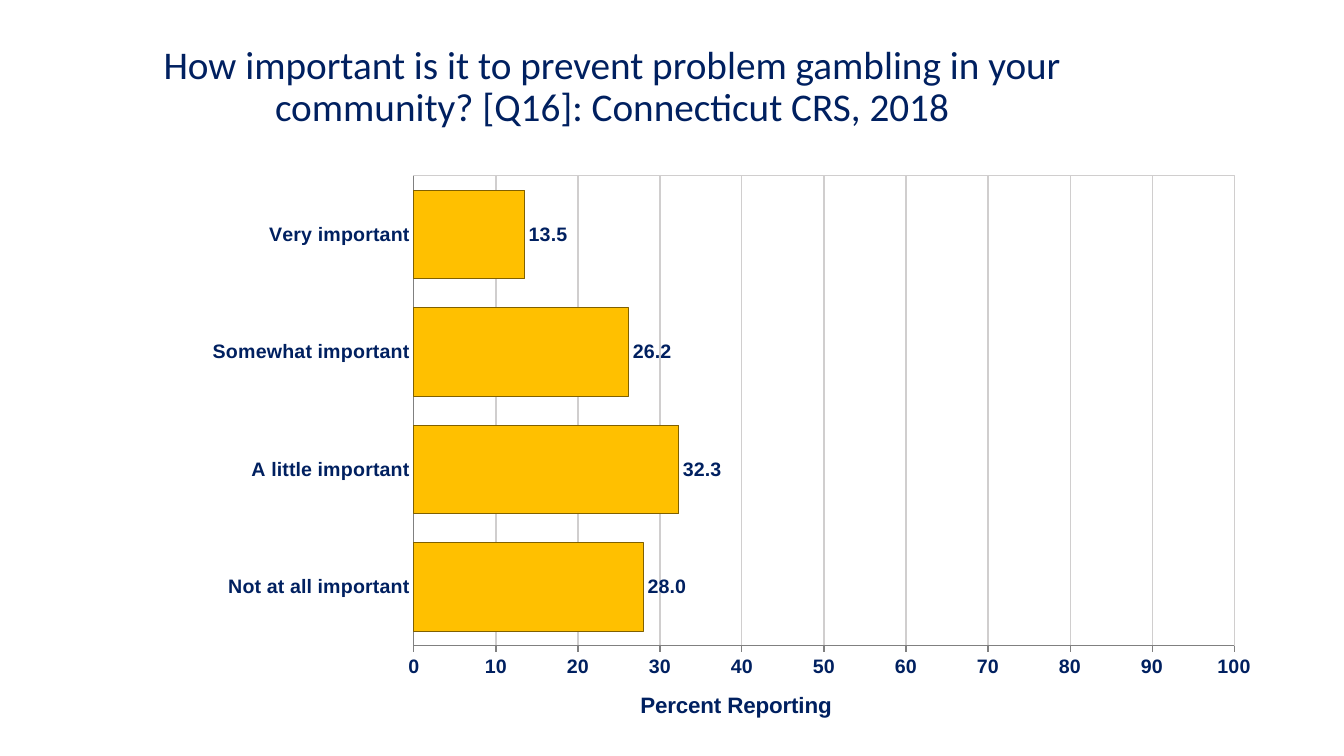
from lxml import etree
from pptx import Presentation
from pptx.chart.data import CategoryChartData
from pptx.dml.color import RGBColor
from pptx.enum.chart import XL_CHART_TYPE, XL_LABEL_POSITION, XL_TICK_MARK
from pptx.enum.text import MSO_ANCHOR, PP_ALIGN
from pptx.oxml import parse_xml
from pptx.oxml.ns import nsdecls, qn
from pptx.util import Inches, Pt

BAR_CLUSTERED = XL_CHART_TYPE.BAR_CLUSTERED
OUTSIDE_END = XL_LABEL_POSITION.OUTSIDE_END
TICK_NONE, TICK_OUT = XL_TICK_MARK.NONE, XL_TICK_MARK.OUTSIDE
TOP, CENTER = MSO_ANCHOR.TOP, PP_ALIGN.CENTER

NAVY = RGBColor(0x00, 0x20, 0x60)
GOLD = RGBColor(0xFF, 0xC0, 0x00)
DARK_GOLD = RGBColor(0x80, 0x60, 0x00)
GRID_GREY = RGBColor(0xD0, 0xCE, 0xCE)
AXIS_GREY = RGBColor(0x80, 0x80, 0x80)


def style_font(font, size, name="Arial", bold=True):
    font.size, font.name, font.bold = Pt(size), name, bold
    font.color.rgb = NAVY


def set_layout(parent, index, target=None, **shares):
    """Place a chart part by shares of the chart's size."""
    for old in parent.findall(qn("c:layout")):
        parent.remove(old)
    layout = parse_xml(f"<c:layout {nsdecls('c')}><c:manualLayout/></c:layout>")
    settings = {"layoutTarget": target} if target else {}
    settings.update(xMode="edge", yMode="edge", **shares)
    for tag, value in settings.items():
        etree.SubElement(layout[0], qn(f"c:{tag}")).set("val", str(value))
    parent.insert(index, layout)


prs = Presentation()
prs.slide_width, prs.slide_height = Inches(13.33), Inches(7.5)
slide = prs.slides.add_slide(prs.slide_layouts[6])

# Question
question = slide.shapes.add_textbox(Inches(0.92), Inches(0.4), Inches(10.3), Inches(1.45))
question.text_frame.word_wrap = True
question.text_frame.vertical_anchor = TOP
paragraph = question.text_frame.paragraphs[0]
paragraph.alignment, paragraph.line_spacing = CENTER, 0.9
run = paragraph.add_run()
run.text = ("How important is it to prevent problem gambling in your "
            "community? [Q16]: Connecticut CRS, 2018")
style_font(run.font, 28, "Calibri", False)

# Answers, from the bottom bar up
answers = CategoryChartData(number_format="0.0")
answers.categories = ["Not at all important", "A little important",
                      "Somewhat important", "Very important"]
answers.add_series("Series 1", (28.0, 32.3, 26.2, 13.5))
chart = slide.shapes.add_chart(BAR_CLUSTERED, Inches(0.59), Inches(1.24),
                               Inches(12.25), Inches(5.95), answers).chart
chart.has_legend = chart.has_title = False
chart.font.size, chart.font.name = Pt(18), "Calibri"

# Bars and their values
bars = chart.plots[0]
bars.vary_by_categories = False
bars.gap_width, bars.overlap = 33, 1
bar_format = bars.series[0].format
bar_format.fill.solid()
bar_format.fill.fore_color.rgb = GOLD
bar_format.line.color.rgb, bar_format.line.width = DARK_GOLD, Pt(0.75)
bars.has_data_labels = True
values = bars.data_labels
values.show_value, values.position = True, OUTSIDE_END
values.number_format, values.number_format_is_linked = "0.0", False
style_font(values.font, 14)

# Axes
answer_axis, percent_axis = chart.category_axis, chart.value_axis
for axis, tick in ((answer_axis, TICK_NONE), (percent_axis, TICK_OUT)):
    axis.major_tick_mark, axis.minor_tick_mark = tick, TICK_NONE
    axis.format.line.color.rgb, axis.format.line.width = AXIS_GREY, Pt(0.75)
    style_font(axis.tick_labels.font, 14)
percent_axis.minimum_scale, percent_axis.maximum_scale = 0, 100
percent_axis.major_unit = 10
percent_axis.tick_labels.number_format = "0"
percent_axis.tick_labels.number_format_is_linked = False
percent_axis.has_major_gridlines = True
grid_line = percent_axis.major_gridlines.format.line
grid_line.color.rgb, grid_line.width = GRID_GREY, Pt(0.75)

# Percent axis title
percent_title = percent_axis.axis_title
run = percent_title.text_frame.paragraphs[0].add_run()
run.text = "Percent Reporting"
style_font(run.font, 16)
set_layout(percent_title._element, 1, x=0.467, y=0.945)

# Plot area with a thin frame
plot_area = chart._chartSpace.chart.plotArea
set_layout(plot_area, 0, "inner", x=0.287, y=0.085, w=0.664, h=0.79)
plot_area.append(parse_xml(
    f'<c:spPr {nsdecls("c", "a")}><a:noFill/><a:ln w="{Pt(0.75)}"><a:solidFill>'
    f'<a:srgbClr val="{GRID_GREY}"/></a:solidFill></a:ln></c:spPr>'))

prs.save("out.pptx")
